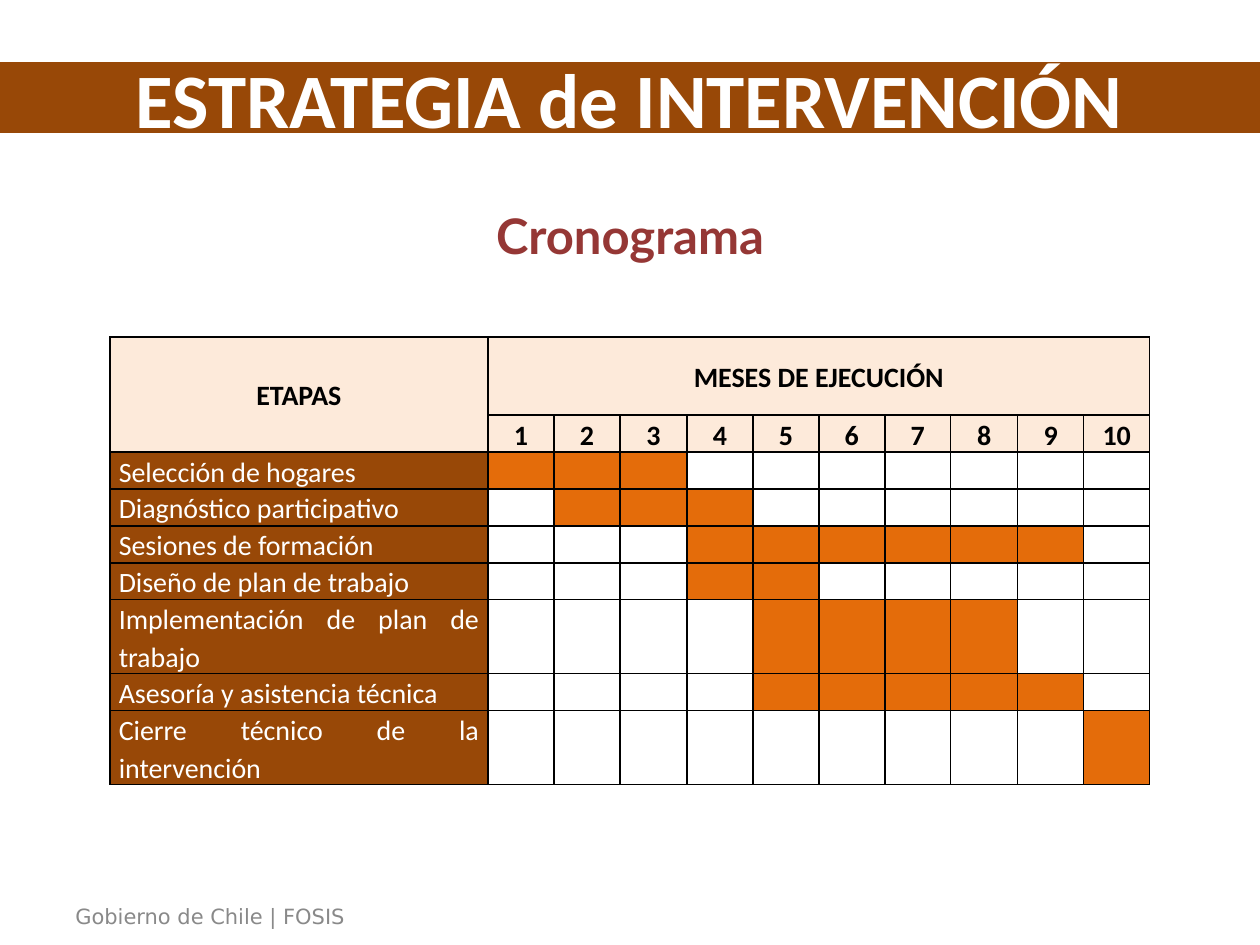
from lxml import etree
from pptx import Presentation
from pptx import util as u
from pptx.dml.color import RGBColor
from pptx.enum import shapes, text
from pptx.oxml.ns import qn

PX = u.Inches(1) // 126
BROWN, ORANGE, PEACH = "984807", "E46C0A", "FDEADA"
WHITE, BLACK, WINE, GRAY = "FFFFFF", "000000", "953735", "898989"

MONTHS = 10
STAGES = [  # name, first month, last month, row height
    ("Selección de hogares", 1, 3, 37),
    ("Diagnóstico participativo", 2, 4, 37),
    ("Sesiones de formación", 4, 9, 37),
    ("Diseño de plan de trabajo", 4, 5, 37),
    ("Implementación de plan de trabajo", 5, 8, 74),
    ("Asesoría y asistencia técnica", 5, 9, 37),
    ("Cierre técnico de la intervención", 10, 10, 74),
]


def color(value):
    return RGBColor.from_string(value)


def set_all(target, values):
    for name, value in values.items():
        setattr(target, name, value)


class SlideBuilder:
    align = text.PP_ALIGN
    middle = text.MSO_ANCHOR.MIDDLE

    def __init__(self, slide):
        self.slide = slide

    def add_words(self, paragraph, words, size, ink, bold=False, font="Calibri", align=None):
        paragraph.alignment = align
        run = paragraph.add_run()
        run.text = words
        set_all(run.font, {"size": u.Pt(size), "bold": bold, "name": font})
        run.font.color.rgb = color(ink)

    def band(self, box, words, fill, **style):
        shape = self.slide.shapes.add_shape(
            shapes.MSO_SHAPE.RECTANGLE, *[v * PX for v in box])
        shape.shadow.inherit = False
        shape.fill.solid()
        shape.fill.fore_color.rgb = color(fill)
        shape.line.fill.background()
        self.fill_frame(shape.text_frame, words, self.middle, style)

    def label(self, box, words, anchor=None, wrap=True, **style):
        shape = self.slide.shapes.add_textbox(*[v * PX for v in box])
        self.fill_frame(shape.text_frame, words, anchor, style, wrap)

    def fill_frame(self, frame, words, anchor, style, wrap=True):
        inset = u.Inches(0.1)
        set_all(frame, {"word_wrap": wrap, "vertical_anchor": anchor,
                        "margin_left": inset, "margin_right": inset})
        if anchor:
            set_all(frame, {"margin_top": inset, "margin_bottom": inset})
        self.add_words(frame.paragraphs[0], words, **style)

    def table(self, left, top, widths, heights):
        frame = self.slide.shapes.add_table(
            len(heights), len(widths), left * PX, top * PX,
            sum(widths) * PX, sum(heights) * PX)
        table = frame.table
        set_all(table, {"first_row": False, "horz_banding": False})
        for column, width in zip(table.columns, widths):
            column.width = width * PX
        for row, height in zip(table.rows, heights):
            row.height = height * PX
        for cell in table.iter_cells():
            self.border(cell)
            set_all(cell, {"margin_left": u.Inches(0.07), "margin_right": u.Inches(0.07),
                           "margin_top": 0, "margin_bottom": 0})
            cell.fill.background()
        return table

    def border(self, cell):
        properties = cell._tc.get_or_add_tcPr()
        for side in ("a:lnL", "a:lnR", "a:lnT", "a:lnB"):
            line = etree.SubElement(properties, qn(side), w=str(u.Pt(1)))
            fill = etree.SubElement(line, qn("a:solidFill"))
            etree.SubElement(fill, qn("a:srgbClr"), val=BLACK)

    def cell(self, cell, fill=None, words="", anchor=None, **style):
        if fill:
            cell.fill.solid()
            cell.fill.fore_color.rgb = color(fill)
        paragraph = cell.text_frame.paragraphs[0]
        if words:
            cell.vertical_anchor = anchor
            set_all(paragraph, {"line_spacing": 1.1, "space_after": u.Pt(6)})
            self.add_words(paragraph, words, 16, **style)
        else:  # keeps an empty cell from stretching its row
            end = etree.SubElement(paragraph._p, qn("a:endParaRPr"))
            end.set("sz", "1200")


def add_schedule(builder):
    edges = [round(i * 662 / MONTHS) for i in range(MONTHS + 1)]
    widths = [378] + [b - a for a, b in zip(edges, edges[1:])]
    heights = [78, 37] + [stage[3] for stage in STAGES]
    table = builder.table(110, 337, widths, heights)
    table.cell(0, 0).merge(table.cell(1, 0))
    table.cell(0, 1).merge(table.cell(0, MONTHS))

    header = {"fill": PEACH, "ink": BLACK, "bold": True, "align": builder.align.CENTER}
    for column, words in enumerate(("ETAPAS", "MESES DE EJECUCIÓN")):
        builder.cell(table.cell(0, column), words=words, anchor=builder.middle, **header)
    for month in range(1, MONTHS + 1):
        builder.cell(table.cell(1, month), words=str(month), **header)
    for row, (name, first, last, _) in enumerate(STAGES, 2):
        builder.cell(table.cell(row, 0), BROWN, name, ink=WHITE,
                     align=builder.align.JUSTIFY)
        for month in range(1, MONTHS + 1):
            builder.cell(table.cell(row, month), ORANGE if first <= month <= last else None)


def main():
    presentation = Presentation()
    set_all(presentation, {"slide_width": 1260 * PX, "slide_height": 945 * PX})
    builder = SlideBuilder(presentation.slides.add_slide(presentation.slide_layouts[6]))
    center = builder.align.CENTER
    builder.label((63, 897, 306, 38), "Gobierno de Chile | FOSIS", wrap=False,
                  size=12, ink=GRAY, font="DejaVu Sans")
    builder.band((0, 62, 1260, 71), "ESTRATEGIA de INTERVENCIÓN", BROWN,
                 size=44, ink=WHITE, bold=True, align=center)
    builder.label((0, 195, 1260, 80), "Cronograma", builder.middle,
                  size=28, ink=WINE, bold=True, font="Lato", align=center)
    add_schedule(builder)
    presentation.save("out.pptx")


if __name__ == "__main__":
    main()
